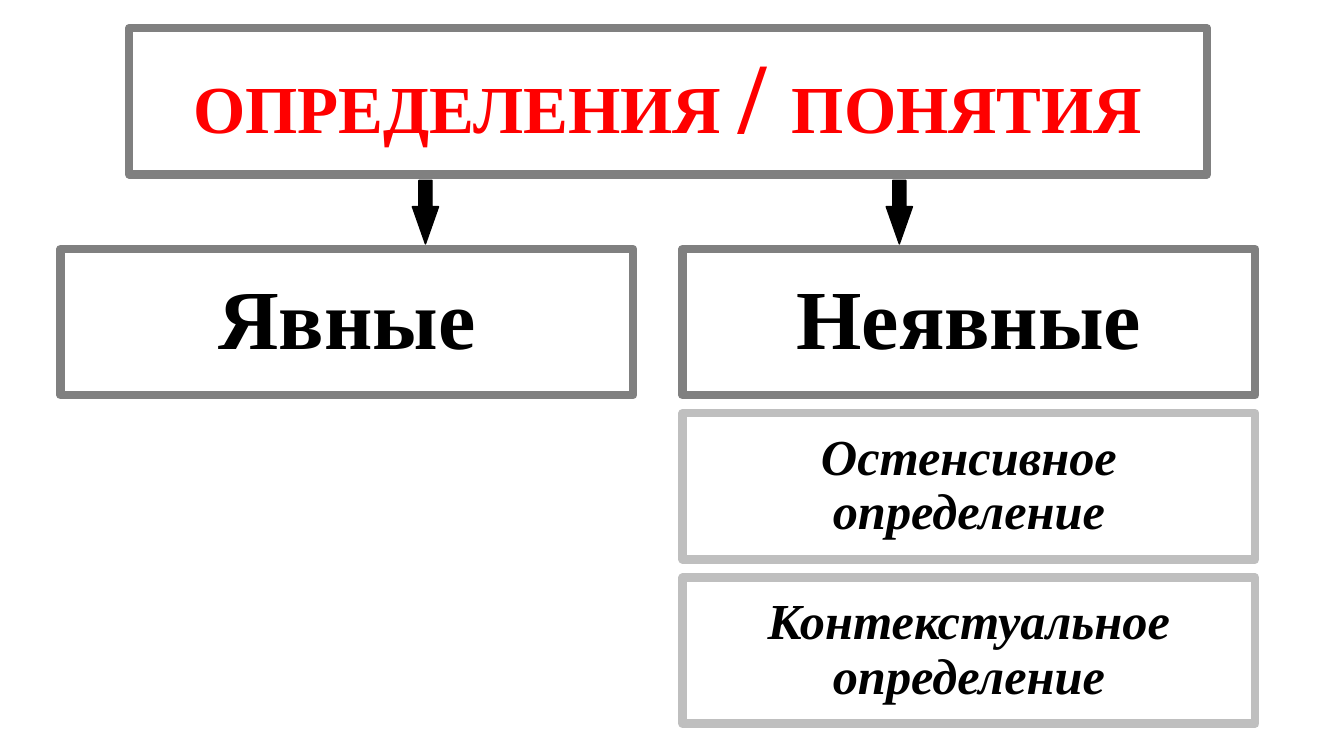
from pptx import Presentation
from pptx.dml.color import RGBColor
from pptx.enum import shapes, text
from pptx.util import Inches, Pt

BOX_HEIGHT = 1.45
COLUMN_WIDTH = 5.68
LEFT_COLUMN, RIGHT_COLUMN = 0.6, 6.77
KINDS_TOP = 2.47
ROW_STEP = 1.63


def color(value):
    """Turn a hex string into a colour."""
    return RGBColor.from_string(value)


def place(shape, left, top, width, height):
    """Move and size a shape, in inches."""
    shape.left, shape.top = Inches(left), Inches(top)
    shape.width, shape.height = Inches(width), Inches(height)


def add_rectangle(page, left, top, width):
    """Add a rectangle of the common height without fill or shadow."""
    box = page.shapes.add_shape(
        shapes.MSO_SHAPE.RECTANGLE,
        Inches(left), Inches(top), Inches(width), Inches(BOX_HEIGHT))
    box.shadow.inherit = False
    box.fill.background()
    return box


def format_box(box, paragraphs, size, border="808080", ink="000000", italic=False):
    """Outline a box and fill it with centred bold paragraphs."""
    box.line.color.rgb = color(border)
    box.line.width = Pt(6)
    frame = box.text_frame
    frame.text = "\n".join(paragraphs)
    frame.word_wrap = True
    frame.auto_size = text.MSO_AUTO_SIZE.NONE
    frame.vertical_anchor = text.MSO_ANCHOR.MIDDLE
    for para in frame.paragraphs:
        para.alignment = text.PP_ALIGN.CENTER
        para.line_spacing = 0.9
        para.space_before = Pt(0)
        for span in para.runs:
            format_span(span, size, ink, italic)


def format_span(span, size, ink, italic=False):
    """Set the font of one run."""
    span.font.name = "Times New Roman"
    span.font.size = Pt(size)
    span.font.bold = True
    span.font.italic = italic
    span.font.color.rgb = color(ink)


def add_heading(page, left, top, width):
    """Add the top box, with a larger slash between its two words."""
    box = add_rectangle(page, left, top, width)
    box.fill.solid()
    box.fill.fore_color.rgb = color("FFFFFF")
    format_box(box, ["ОПРЕДЕЛЕНИЯ "], 48, ink="FF0000")
    para = box.text_frame.paragraphs[0]
    for words, size in (("/ ", 72), ("ПОНЯТИЯ", 48)):
        span = para.add_run()
        span.text = words
        format_span(span, size, "FF0000")


def add_arrow(page, left, top, width, height):
    """Add a black block arrow pointing down."""
    arrow = page.shapes.add_shape(
        shapes.MSO_SHAPE.DOWN_ARROW,
        Inches(left), Inches(top), Inches(width), Inches(height))
    arrow.shadow.inherit = False
    arrow.adjustments[0] = 0.5
    arrow.adjustments[1] = 1.42
    arrow.fill.solid()
    arrow.fill.fore_color.rgb = color("000000")
    arrow.line.color.rgb = color("000000")
    arrow.line.width = Pt(1)


def add_implicit_column(page, left, top, width):
    """Stack the implicit kind above its two varieties."""
    format_box(add_rectangle(page, left, top, width), ["Неявные"], 60)
    varieties = (["Остенсивное определение"], ["Контекстуальное", "определение"])
    for row, paragraphs in enumerate(varieties, start=1):
        box = add_rectangle(page, left, top + row * ROW_STEP, width)
        format_box(box, paragraphs, 36, border="BFBFBF", italic=True)


def build_page(deck):
    """Build the scheme of definitions."""
    page = deck.slides.add_slide(deck.slide_layouts[5])
    place(page.shapes.title, LEFT_COLUMN, KINDS_TOP, COLUMN_WIDTH, BOX_HEIGHT)
    format_box(page.shapes.title, ["Явные"], 60)
    add_heading(page, 1.28, 0.28, 10.69)
    for left in (4.09, 8.79):
        add_arrow(page, left, 1.79, 0.26, 0.63)
    add_implicit_column(page, RIGHT_COLUMN, KINDS_TOP, COLUMN_WIDTH)


def main():
    """Create and save the deck."""
    deck = Presentation()
    deck.slide_width, deck.slide_height = Inches(13.33), Inches(7.5)
    build_page(deck)
    deck.save("out.pptx")


if __name__ == "__main__":
    main()
